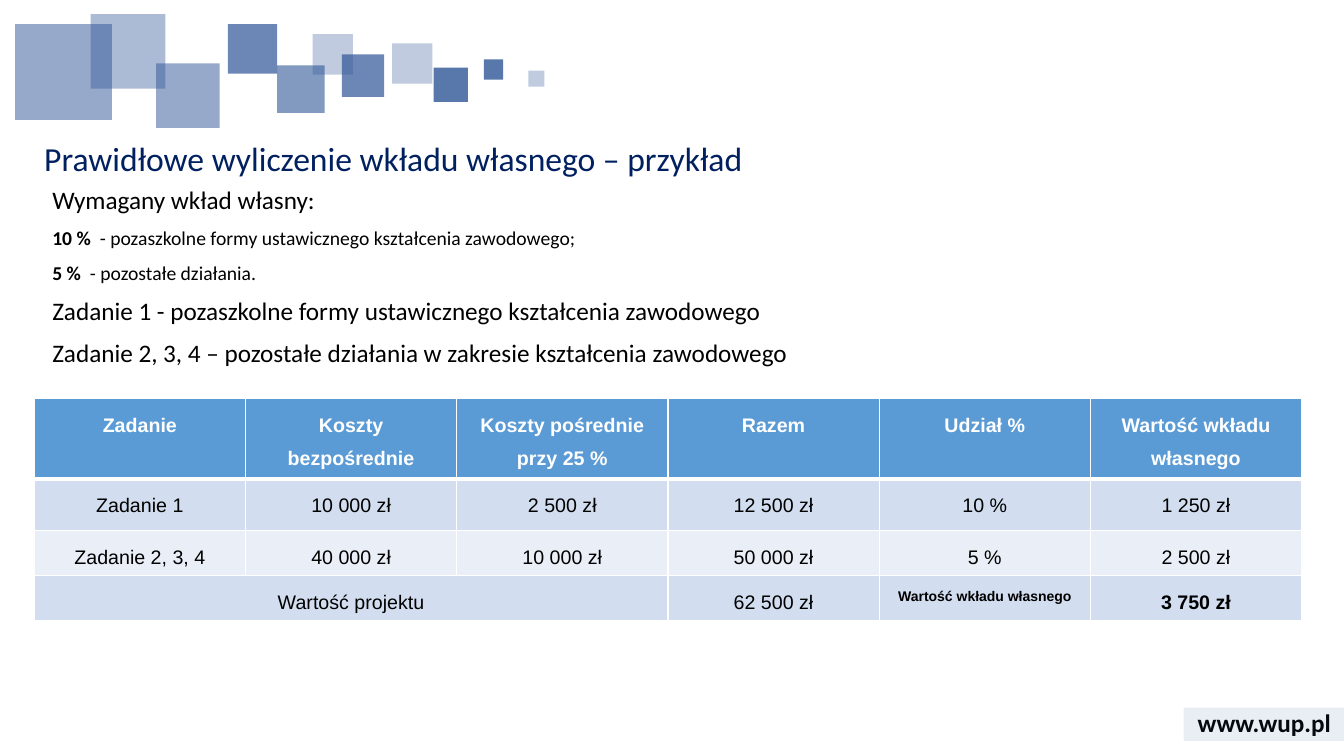
"""Build the slide on calculating the own contribution, with an example table."""
from lxml.etree import SubElement
from pptx import Presentation
from pptx.dml.color import RGBColor
from pptx.enum.shapes import MSO_SHAPE
from pptx.enum.text import MSO_ANCHOR, PP_ALIGN
from pptx.oxml import parse_xml
from pptx.oxml.ns import nsdecls, qn
from pptx.util import Inches, Pt

COLORS = {
    "square": "2F5597", "title": "002060", "text": "000000", "white": "FFFFFF",
    "header": "5B9BD5", "band_dark": "D2DEEF", "band_light": "EAEFF7",
}


def rgb(name):
    return RGBColor.from_string(COLORS[name])


def add_text(left, top, width, height, paragraphs, color, anchor=MSO_ANCHOR.TOP):
    tf = s.shapes.add_textbox(Inches(left), Inches(top), Inches(width), Inches(height)).text_frame
    tf.word_wrap = True
    tf.vertical_anchor = anchor
    for i, (size, runs) in enumerate(paragraphs):
        p = tf.add_paragraph() if i else tf.paragraphs[0]
        p.font.name = "Calibri"
        p.font.size = Pt(size)
        p.font.color.rgb = rgb(color)
        p.line_spacing = 0.9
        p.space_before = Pt(10 if i else 0)
        for text, bold in runs:
            r = p.add_run()
            r.text = text
            r.font.bold = bold
    return tf


prs = Presentation()
prs.slide_width, prs.slide_height = Inches(13.33), Inches(7.5)
s = prs.slides.add_slide(prs.slide_layouts[6])

footer = add_text(11.74, 6.97, 1.6, 0.4, [(18, [("www.wup.pl", True)])], "text", MSO_ANCHOR.MIDDLE)
footer.paragraphs[0].alignment = PP_ALIGN.CENTER
footer.paragraphs[0].line_spacing = 1.0

squares = [
    (3.89, 0.43, 0.4, 0.4, 30), (4.3, 0.67, 0.34, 0.34, 80), (3.39, 0.54, 0.42, 0.42, 70),
    (0.15, 0.24, 0.96, 0.95, 50), (2.75, 0.65, 0.47, 0.47, 60), (1.55, 0.63, 0.63, 0.64, 50),
    (0.9, 0.14, 0.74, 0.74, 40), (4.8, 0.59, 0.19, 0.2, 80), (2.26, 0.24, 0.49, 0.49, 70),
    (3.1, 0.34, 0.4, 0.4, 30), (5.24, 0.7, 0.16, 0.16, 30),
]
footer_band = (11.74, 7.02, 1.6, 0.33, 10)
for *box, opacity in squares + [footer_band]:
    sp = s.shapes.add_shape(MSO_SHAPE.RECTANGLE, *[Inches(v) for v in box])
    sp.shadow.inherit = False
    sp.line.fill.background()
    sp.fill.solid()
    sp.fill.fore_color.rgb = rgb("square")
    color = sp.fill._xPr.find(qn("a:solidFill"))[0]
    SubElement(color, qn("a:alpha"), val=str(opacity * 1000))

add_text(0.34, 1.36, 12.41, 0.55,
         [(24, [("Prawidłowe wyliczenie wkładu własnego – przykład", False)])], "title")
add_text(0.42, 1.81, 12.41, 4.27, [
    (18, [("Wymagany wkład własny:", False)]),
    (14, [("10 %  ", True), ("- pozaszkolne formy ustawicznego kształcenia zawodowego;", False)]),
    (14, [("5 %  ", True), ("- pozostałe działania.", False)]),
    (18, [("Zadanie 1 - pozaszkolne formy ustawicznego kształcenia zawodowego", False)]),
    (18, [("Zadanie 2, 3, 4 – pozostałe działania w zakresie kształcenia zawodowego", False)]),
], "text")

rows = [
    ["Zadanie", "Koszty bezpośrednie", "Koszty pośrednie\nprzy 25 %", "Razem", "Udział %",
     "Wartość wkładu własnego"],
    ["Zadanie 1", "10 000 zł", "2 500 zł", "12 500 zł", "10 %", "1 250 zł"],
    ["Zadanie 2, 3, 4", "40 000 zł", "10 000 zł", "50 000 zł", "5 %", "2 500 zł"],
    ["Wartość projektu", "", "", "62 500 zł", "Wartość wkładu własnego", "3 750 zł"],
]
heights = [0.8, 0.51, 0.45, 0.45]
fills = ["header", "band_dark", "band_light", "band_dark"]
table = s.shapes.add_table(len(rows), len(rows[0]), Inches(0.34), Inches(3.95),
                           Inches(12.57), Inches(sum(heights))).table
table.cell(3, 0).merge(table.cell(3, 2))
for i, row in enumerate(rows):
    table.rows[i].height = Inches(heights[i])
    for j, text in enumerate(row):
        cell = table.cell(i, j)
        if not cell.is_spanned:
            cell.text = text
        for p in cell.text_frame.paragraphs:
            p.alignment = PP_ALIGN.CENTER
            p.line_spacing = 1.5
            p.font.name = "Arial"
            p.font.size = Pt(10 if (i, j) == (3, 4) else 14)
            p.font.bold = i == 0 or (i == 3 and j > 3)
            p.font.color.rgb = rgb("text" if i else "white")
        tcPr = cell._tc.get_or_add_tcPr()
        for side in ("lnL", "lnR", "lnT", "lnB"):
            thick = (i, side) in ((0, "lnB"), (1, "lnT"))
            tcPr.append(parse_xml(
                f'<a:{side} {nsdecls("a")} w="{Pt(3 if thick else 1)}"><a:solidFill>'
                f'<a:srgbClr val="{COLORS["white"]}"/></a:solidFill></a:{side}>'))
        cell.fill.solid()
        cell.fill.fore_color.rgb = rgb(fills[i])

prs.save("out.pptx")
